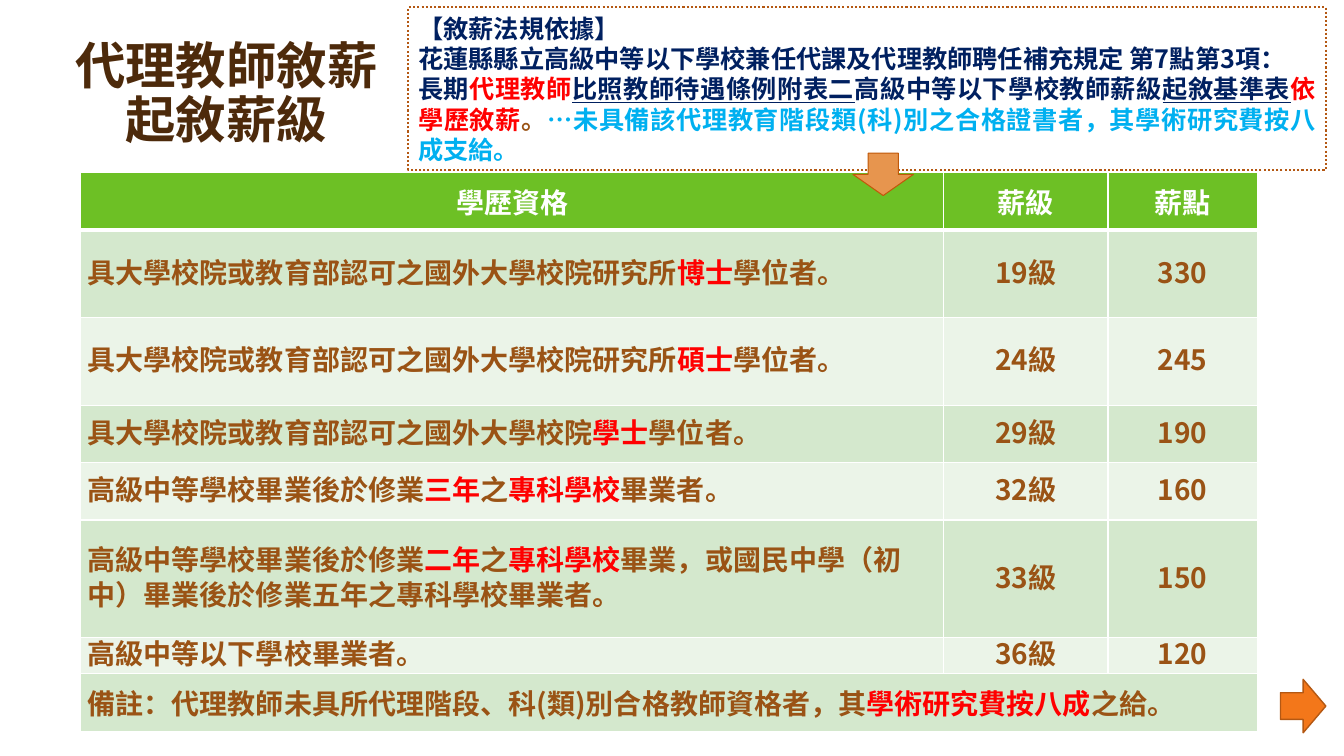
from copy import deepcopy

from lxml import etree
from pptx import Presentation
from pptx.dml.color import RGBColor
from pptx.enum.dml import MSO_LINE
from pptx.enum.shapes import MSO_SHAPE
from pptx.enum.text import MSO_ANCHOR, MSO_AUTO_SIZE, PP_ALIGN
from pptx.oxml.ns import qn
from pptx.util import Inches, Pt

CENTER, LEFT, JUSTIFY = PP_ALIGN.CENTER, PP_ALIGN.LEFT, PP_ALIGN.JUSTIFY
MIDDLE, BOTTOM = MSO_ANCHOR.MIDDLE, MSO_ANCHOR.BOTTOM
NO_FIT, GROW = MSO_AUTO_SIZE.NONE, MSO_AUTO_SIZE.SHAPE_TO_FIT_TEXT
RECT, DOWN, RIGHT = MSO_SHAPE.RECTANGLE, MSO_SHAPE.DOWN_ARROW, MSO_SHAPE.RIGHT_ARROW
DOTS = MSO_LINE.ROUND_DOT

FACE = "Noto Sans CJK SC"
WHITE = RGBColor(0xFF, 0xFF, 0xFF)
DARK = RGBColor(0x4D, 0x2A, 0x0B)
BROWN = RGBColor(0x9A, 0x53, 0x15)
RED = RGBColor(0xFF, 0x00, 0x00)
NAVY = RGBColor(0x00, 0x20, 0x60)
SKY = RGBColor(0x00, 0xB0, 0xF0)
GREEN = RGBColor(0x6D, 0xC0, 0x25)
BANDS = RGBColor(0xD4, 0xE8, 0xCD), RGBColor(0xEB, 0xF4, 0xE8)
RUST = RGBColor(0xB4, 0x58, 0x13)
BURNT = RGBColor(0xC0, 0x58, 0x0A)
PEACH = RGBColor(0xE7, 0x95, 0x4E)
ORANGE = RGBColor(0xF3, 0x77, 0x1A)

RULES = [
    [("【敘薪法規依據】", NAVY)],
    [("花蓮縣縣立高級中等以下學校兼任代課及代理教師聘任補充規定 第7點第3項：", NAVY)],
    [("長期", NAVY), ("代理教師", RED), ("比照教師待遇條例附表二", NAVY, True),
     ("高級中等以下學校教師薪級", NAVY), ("起敘基準表", NAVY, True),
     ("依學歷敘薪", RED), ("。", BROWN),
     ("…未具備該代理教育階段類(科)別之合格證書者，其學術研究費按八成支給。", SKY)],
]
HEADS = ["學歷資格", "薪級", "薪點"]
COLS = [8.56, 1.63, 1.48]
HIGHS = [0.57, 0.87, 0.87, 0.57, 0.57, 1.17, 0.35, 0.58]
# Red and brown parts alternate, beginning with brown.
GRADES = [
    (["具大學校院或教育部認可之國外大學校院研究所", "博士", "學位者。"], "19級", "330"),
    (["具大學校院或教育部認可之國外大學校院研究所", "碩士", "學位者。"], "24級", "245"),
    (["具大學校院或教育部認可之國外大學校院", "學士", "學位者。"], "29級", "190"),
    (["高級中等學校畢業後於修業", "三年", "之", "專科學校", "畢業者。"], "32級", "160"),
    (["高級中等學校畢業後於修業", "二年", "之", "專科學校",
      "畢業，或國民中學（初中）畢業後於修業五年之專科學校畢業者。"], "33級", "150"),
    (["高級中等以下學校畢業者。"], "36級", "120"),
]
NOTE = ["備註：代理教師未具所代理階段、科(類)別合格教師資格者，其", "學術研究費按八成", "之給。"]


def tint(parts):
    return [(text, RED if i % 2 else BROWN) for i, text in enumerate(parts)]


class Deck:
    def __init__(self):
        self.prs = Presentation()
        self.prs.slide_width, self.prs.slide_height = Inches(13.33), Inches(7.5)
        self.slide = self.prs.slides.add_slide(self.prs.slide_layouts[5])

    def style(self, run, size, color, under=False):
        font = run.font
        font.name, font.size, font.bold = FACE, Pt(size), True
        font.color.rgb = color
        if under:
            font.underline = True
        etree.SubElement(font._element, qn("a:ea")).set("typeface", FACE)

    def fill_para(self, para, parts, size, align, space=None):
        para.alignment = align
        if space:
            para.line_spacing = Pt(space)
        for text, *look in parts:
            run = para.add_run()
            run.text = text
            self.style(run, size, *look)

    def title(self, text, box):
        shape = self.slide.shapes.title
        shape.left, shape.top, shape.width, shape.height = map(Inches, box)
        frame = shape.text_frame
        frame.text = text
        frame.word_wrap, frame.auto_size = True, NO_FIT
        frame.vertical_anchor = BOTTOM
        para = frame.paragraphs[0]
        para.alignment, para.line_spacing = CENTER, Pt(38)
        for run in para.runs:
            self.style(run, 36, DARK)
        for gap in para._p.findall(qn("a:br")):
            gap.insert(0, deepcopy(para.runs[0].font._element))

    def shape(self, kind, box, line, width, fill=None):
        shape = self.slide.shapes.add_shape(kind, *map(Inches, box))
        shape.shadow.inherit = False
        if fill is None:
            shape.fill.background()
        else:
            shape.fill.solid()
            shape.fill.fore_color.rgb = fill
        shape.line.color.rgb, shape.line.width = line, Pt(width)
        return shape

    def panel(self, paras, box):
        shape = self.shape(RECT, box, RUST, 1.5)
        shape.line.dash_style = DOTS
        frame = shape.text_frame
        frame.word_wrap, frame.auto_size = True, GROW
        for i, parts in enumerate(paras):
            para = frame.add_paragraph() if i else frame.paragraphs[0]
            self.fill_para(para, parts, 18, JUSTIFY, 21.6)

    def edges(self, cell, row):
        """Draw white cell borders, with a thick rule below the heading."""
        props = cell._tc.get_or_add_tcPr()
        thick = {"B": row == 0, "T": row == 1}
        for side in "LRTB":
            width = Pt(3 if thick.get(side) else 1)
            line = etree.SubElement(props, qn("a:ln" + side), w=str(width))
            paint = etree.SubElement(line, qn("a:solidFill"))
            etree.SubElement(paint, qn("a:srgbClr"), val=str(WHITE))

    def cell(self, cell, row, parts, align, fill, space=None):
        cell.margin_left = cell.margin_right = Inches(0.07)
        cell.margin_top = cell.margin_bottom = 0
        cell.vertical_anchor = MIDDLE
        self.edges(cell, row)
        cell.fill.solid()
        cell.fill.fore_color.rgb = fill
        self.fill_para(cell.text_frame.paragraphs[0], parts, 20, align, space)

    def table(self, box):
        grid = self.slide.shapes.add_table(len(HIGHS), len(COLS), *map(Inches, box)).table
        for col, width in zip(grid.columns, COLS):
            col.width = Inches(width)
        for row, high in zip(grid.rows, HIGHS):
            row.height = Inches(high)
        for c, head in enumerate(HEADS):
            self.cell(grid.cell(0, c), 0, [(head, WHITE)], CENTER, GREEN)
        for r, (parts, *marks) in enumerate(GRADES, 1):
            band = BANDS[(r - 1) % 2]
            self.cell(grid.cell(r, 0), r, tint(parts), LEFT, band, 25)
            for c, mark in enumerate(marks, 1):
                self.cell(grid.cell(r, c), r, [(mark, BROWN)], CENTER, band, 25)
        last = len(HIGHS) - 1
        grid.cell(last, 0).merge(grid.cell(last, len(COLS) - 1))
        self.cell(grid.cell(last, 0), last, tint(NOTE), LEFT, BANDS[0])


def main():
    deck = Deck()
    deck.title("代理教師敘薪\v起敘薪級", (0.55, 0.49, 3.39, 1.03))
    deck.table((0.8, 1.71, sum(COLS), sum(HIGHS)))
    deck.panel(RULES, (4.05, 0.07, 9.1, 1.62))
    deck.shape(DOWN, (8.46, 1.52, 0.6, 0.42), BURNT, 0.75, PEACH)
    deck.shape(RIGHT, (12.7, 6.74, 0.45, 0.53), RUST, 1, ORANGE)
    deck.prs.save("out.pptx")


if __name__ == "__main__":
    main()
